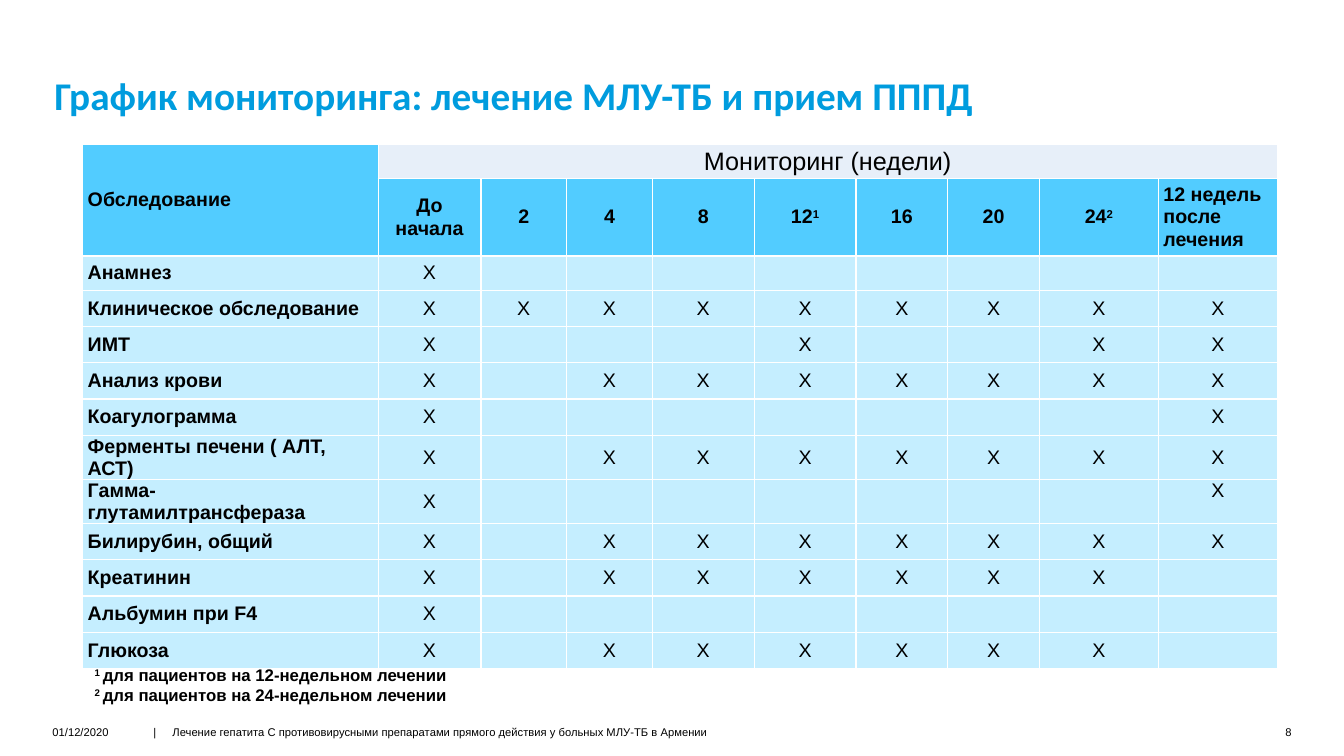
from lxml.etree import SubElement
from pptx import Presentation
from pptx.dml.color import RGBColor
from pptx.enum.text import MSO_ANCHOR, MSO_AUTO_SIZE, PP_ALIGN
from pptx.oxml.ns import qn
from pptx.util import Inches, Pt

COLORS = {"title": "009CDE", "text": "000000", "head": "52CCFF",
          "band": "E7EFF9", "body": "C5EEFF", "border": "FFFFFF"}

COL_WIDTHS = [2.93, 1.02, 0.85, 0.85, 1.01, 1.01, 0.91, 0.91, 1.18, 1.18]
ROW_HEIGHTS = [0.34, 0.77, 0.34] + [0.36] * 10

# A caret puts the rest of the label in superscript.
VISITS = ["До начала", "2", "4", "8", "12^1", "16", "20", "24^2",
          "12 недель после лечения"]

# One mark per visit: X for an examination, a dot for none.
EXAMS = [
    ("Анамнез", "X........"),
    ("Клиническое обследование", "XXXXXXXXX"),
    ("ИМТ", "X...X..XX"),
    ("Анализ крови", "X.XXXXXXX"),
    ("Коагулограмма", "X.......X"),
    ("Ферменты печени ( АЛТ, АСТ)", "X.XXXXXXX"),
    ("Гамма-глутамилтрансфераза", "X.......X"),
    ("Билирубин, общий", "X.XXXXXXX"),
    ("Креатинин", "X.XXXXXX."),
    ("Альбумин при F4", "X........"),
    ("Глюкоза", "X.XXXXXX."),
]
FOOTNOTES = [("1 ", "для пациентов на 12-недельном лечении"),
             ("2 ", "для пациентов на 24-недельном лечении")]


def style(p, size, bold=False, align=PP_ALIGN.LEFT, color="text", name="Arial"):
    p.alignment = align
    f = p.font
    f.size, f.bold, f.name = Pt(size), bold, name
    f.color.rgb = RGBColor.from_string(COLORS[color])


def add_superscript(p, text):
    r = p.add_run()
    r.text = text
    r.font._element.set("baseline", "30000")


def set_margins(obj, left, top, right, bottom):
    obj.margin_left, obj.margin_top = Inches(left), Inches(top)
    obj.margin_right, obj.margin_bottom = Inches(right), Inches(bottom)


def add_title(s, left, top, width, height):
    sp = s.shapes.title
    sp.left, sp.top = Inches(left), Inches(top)
    sp.width, sp.height = Inches(width), Inches(height)
    tf = sp.text_frame
    tf.auto_size = MSO_AUTO_SIZE.NONE
    tf.vertical_anchor = MSO_ANCHOR.BOTTOM
    set_margins(tf, 0.02, 0, 0.39, 0)
    p = tf.paragraphs[0]
    p.text = "График мониторинга: лечение МЛУ-ТБ и прием ПППД"
    p.line_spacing = 0.9
    style(p, 28, True, color="title", name="Calibri")


def add_borders(cell):
    tc_pr = cell._tc.get_or_add_tcPr()
    for side in ("lnL", "lnR", "lnT", "lnB"):
        ln = SubElement(tc_pr, qn(f"a:{side}"), w=str(Pt(1)))
        fill = SubElement(ln, qn("a:solidFill"))
        SubElement(fill, qn("a:srgbClr"), val=COLORS["border"])


def fill_cell(cell, text, fill, size=14, bold=False, align=PP_ALIGN.CENTER):
    add_borders(cell)
    cell.fill.solid()
    cell.fill.fore_color.rgb = RGBColor.from_string(COLORS[fill])
    cell.vertical_anchor = MSO_ANCHOR.MIDDLE
    set_margins(cell, 0.05, 0, 0.05, 0)
    p = cell.text_frame.paragraphs[0]
    style(p, size, bold, align)
    base, _, raised = text.partition("^")
    if base:
        p.add_run().text = base
    if raised:
        add_superscript(p, raised)


def add_schedule(s, left, top):
    table = s.shapes.add_table(
        len(ROW_HEIGHTS), len(COL_WIDTHS), Inches(left), Inches(top),
        Inches(sum(COL_WIDTHS)), Inches(sum(ROW_HEIGHTS))).table
    table.first_row = table.horz_banding = False
    for column, width in zip(table.columns, COL_WIDTHS):
        column.width = Inches(width)
    for row, height in zip(table.rows, ROW_HEIGHTS):
        row.height = Inches(height)

    last = len(COL_WIDTHS) - 1
    for j in range(last + 1):
        fill_cell(table.cell(0, j), "Мониторинг (недели)" if j == 1 else "",
                  "band" if j else "head", 18)
    fill_cell(table.cell(1, 0), "", "head")
    for j, visit in enumerate(VISITS, 1):
        align = PP_ALIGN.LEFT if j == last else PP_ALIGN.CENTER
        fill_cell(table.cell(1, j), visit, "head", bold=True, align=align)
    table.cell(0, 0).merge(table.cell(1, 0))
    table.cell(0, 1).merge(table.cell(0, last))
    p = table.cell(0, 0).text_frame.paragraphs[0]
    p.text = "Обследование"
    style(p, 14, True)

    for i, (exam, marks) in enumerate(EXAMS, 2):
        fill_cell(table.cell(i, 0), exam, "body", bold=True, align=PP_ALIGN.LEFT)
        for j, mark in enumerate(marks, 1):
            fill_cell(table.cell(i, j), mark.strip("."), "body")
        if exam.startswith("Гамма"):
            table.cell(i, last).vertical_anchor = MSO_ANCHOR.TOP


def add_text_box(s, left, top, width, height):
    tf = s.shapes.add_textbox(Inches(left), Inches(top),
                              Inches(width), Inches(height)).text_frame
    tf.word_wrap = True
    return tf


def add_footnotes(s, left, top, width, height):
    tf = add_text_box(s, left, top, width, height)
    tf.vertical_anchor = MSO_ANCHOR.MIDDLE
    for i, (number, note) in enumerate(FOOTNOTES):
        p = tf.add_paragraph() if i else tf.paragraphs[0]
        add_superscript(p, number)
        p.add_run().text = note
        style(p, 12, True)


def add_footer(s, left, top):
    subject = ("|\tЛечение гепатита С противовирусными препаратами "
               "прямого действия у больных МЛУ-ТБ в Армении")
    parts = [(0, 0.86, 0.2, "01/12/2020", PP_ALIGN.LEFT),
             (1, 6.62, 0.3, subject, PP_ALIGN.LEFT),
             (11.97, 0.32, 0.2, "8", PP_ALIGN.RIGHT)]
    for dx, width, height, text, align in parts:
        tf = add_text_box(s, left + dx, top, width, height)
        set_margins(tf, 0, 0, 0, 0)
        p = tf.paragraphs[0]
        p.text = text
        if "\t" in text:
            tabs = SubElement(p._p.get_or_add_pPr(), qn("a:tabLst"))
            SubElement(tabs, qn("a:tab"), pos=str(Inches(0.19)), algn="l")
        style(p, 8, align=align)


def main():
    prs = Presentation()
    prs.slide_width, prs.slide_height = Inches(13.33), Inches(7.5)
    s = prs.slides.add_slide(prs.slide_layouts[5])
    add_title(s, 0.52, 0.39, 9.69, 0.79)
    add_schedule(s, 0.82, 1.43)
    add_footnotes(s, 0.84, 6.72, 5.02, 0.15)
    add_footer(s, 0.52, 7.2)
    prs.save("out.pptx")


if __name__ == "__main__":
    main()
